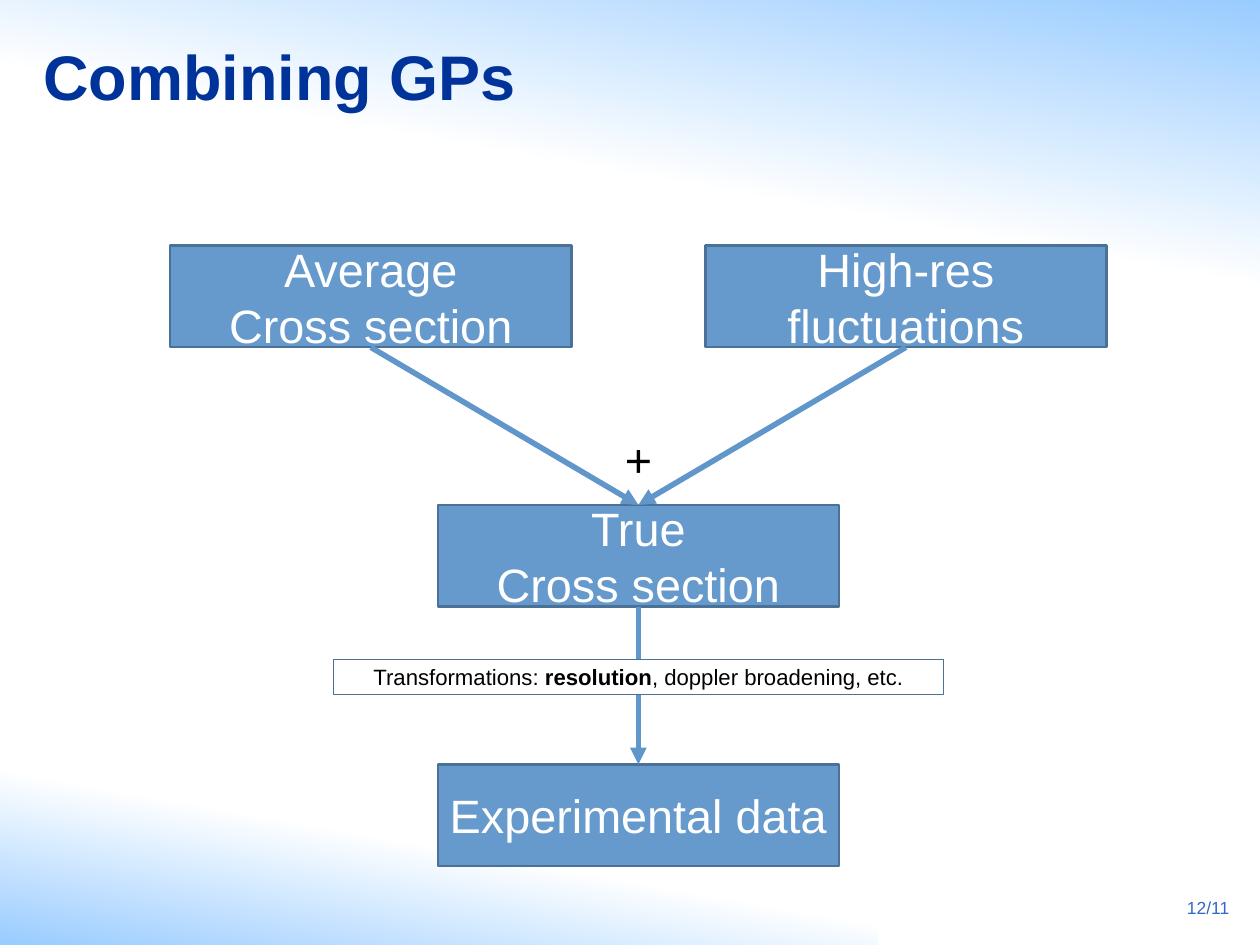
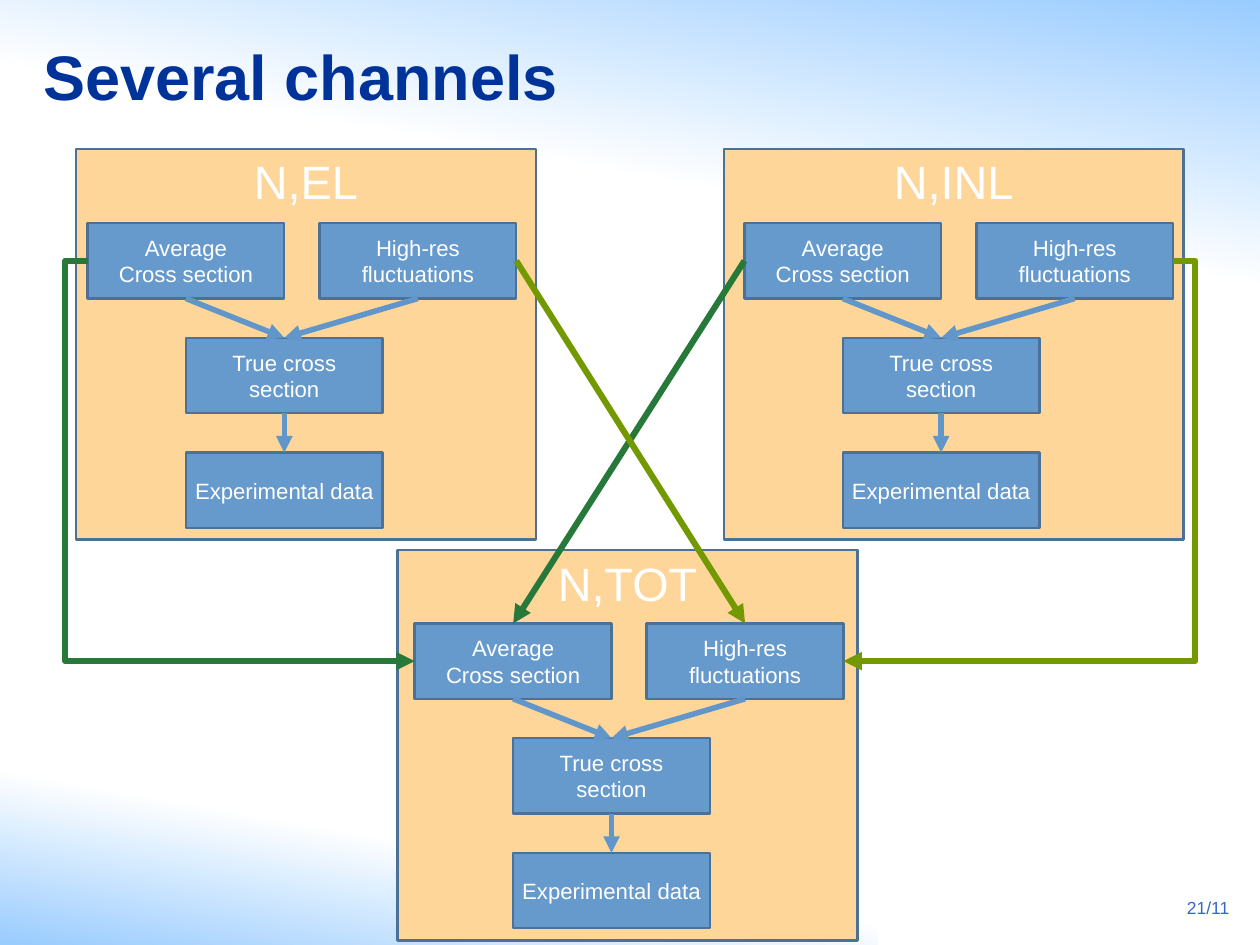
from lxml import etree
from pptx import Presentation
from pptx.dml.color import RGBColor
from pptx.enum.shapes import MSO_CONNECTOR, MSO_SHAPE
from pptx.enum.text import MSO_ANCHOR, MSO_AUTO_SIZE, PP_ALIGN
from pptx.oxml.ns import qn
from pptx.util import Cm, Pt

RECT = MSO_SHAPE.RECTANGLE
STRAIGHT, ELBOW = MSO_CONNECTOR.STRAIGHT, MSO_CONNECTOR.ELBOW
TOP, MIDDLE = MSO_ANCHOR.TOP, MSO_ANCHOR.MIDDLE
LEFT, CENTER, RIGHT = PP_ALIGN.LEFT, PP_ALIGN.CENTER, PP_ALIGN.RIGHT
FONT = "Arial"
COLORS = {
    name: RGBColor.from_string(value)
    for name, value in {
        "title": "003399", "number": "3366CC", "sky": "99CCFF",
        "white": "FFFFFF", "black": "000000", "box": "6699CC",
        "border": "4B7197", "panel": "FFD699", "arrow": "6196CA",
        "average": "267939", "highres": "739900",
    }.items()
}


def add_box(s, x, y, w, h, text, size, fill="box", color="white", border=2, anchor=MIDDLE):
    """Add a bordered rectangle with centred text; lengths in cm."""
    sp = s.shapes.add_shape(RECT, Cm(x), Cm(y), Cm(w), Cm(h))
    sp.shadow.inherit = False
    sp.fill.solid()
    sp.fill.fore_color.rgb = COLORS[fill]
    sp.line.color.rgb = COLORS["border"]
    sp.line.width = Pt(border)
    tf = sp.text_frame
    tf.word_wrap = True
    tf.margin_left = tf.margin_right = Cm(0.25)
    tf.vertical_anchor = anchor
    tf.text = text
    for p in tf.paragraphs:
        p.alignment = CENTER
        p.font.name, p.font.size = FONT, Pt(size)
        p.font.color.rgb = COLORS[color]
    return sp


def add_arrow(s, start, start_side, end, end_side, color="arrow", width=4.5, bend=None):
    """Join two boxes; bend is the elbow position in 1/100000 of the width."""
    c = s.shapes.add_connector(STRAIGHT if bend is None else ELBOW, 0, 0, 0, 0)
    c.begin_connect(start, start_side)
    c.end_connect(end, end_side)
    c.line.color.rgb = COLORS[color]
    c.line.width = Pt(width)
    spPr = c.element.spPr
    etree.SubElement(spPr.find(qn("a:ln")), qn("a:tailEnd"), type="triangle")
    etree.SubElement(spPr, qn("a:effectLst"))
    if bend is not None:
        guides = spPr.find(qn("a:prstGeom")).get_or_add_avLst()
        etree.SubElement(guides, qn("a:gd"), name="adj1", fmla=f"val {bend}")


prs = Presentation()
prs.slide_width, prs.slide_height = Cm(36.12), Cm(27.1)
layout = prs.slide_layouts[5]

# Title place, shared through the layout
title = layout.placeholders[0]
title.left, title.top, title.width, title.height = Cm(0.99), Cm(0.46), Cm(24.18), Cm(3.4)

# Titles and page numbers
slides = []
for heading, number in [("Combining GPs", "12/11"), ("Several channels", "21/11")]:
    s = prs.slides.add_slide(layout)
    slides.append(s)
    tf = s.shapes.title.text_frame
    tf.text = heading
    tf.auto_size = MSO_AUTO_SIZE.NONE
    tf.vertical_anchor = MIDDLE
    p = tf.paragraphs[0]
    p.alignment = LEFT
    p.font.name, p.font.size, p.font.bold = FONT, Pt(51.2), True
    p.font.color.rgb = COLORS["title"]

    tf = s.shapes.add_textbox(Cm(33.48), Cm(25.6), Cm(2.01), Cm(1.17)).text_frame
    tf.word_wrap = True
    tf.text = number
    p = tf.paragraphs[0]
    p.alignment = RIGHT
    p.font.name, p.font.size = FONT, Pt(14.2)
    p.font.color.rgb = COLORS["number"]
combining, channels = slides

# Gradient bands, moved to the back of the layout
for y, w, h, fade, angle in [(0, 36.12, 8.43, 0.56, 260), (20.95, 25.17, 6.15, 0.48, 80)]:
    band = combining.shapes.add_shape(RECT, 0, Cm(y), Cm(w), Cm(h))
    band.shadow.inherit = False
    band.line.fill.background()
    band.fill.gradient()
    band.fill.gradient_angle = angle
    for stop, color, position in zip(band.fill.gradient_stops, ("sky", "white"), (0, fade)):
        stop.color.rgb = COLORS[color]
        stop.position = position
    layout.shapes.element.insert(2, band.element)

# Panels behind the channel flows
for name, x, y in [("N,TOT", 11.4, 15.77), ("N,INL", 20.75, 4.27), ("N,EL", 2.18, 4.27)]:
    add_box(channels, x, y, 13.18, 11.2, name, 38, fill="panel", anchor=TOP)

# Flows: two inputs, true cross section, data
large = dict(w=11.5, h=2.92, size=38, true_dx=7.67, high_dx=15.34, dy=7.44,
             true_text="True\nCross section")
small = dict(w=5.64, h=2.16, size=18, true_dx=2.82, high_dx=6.65, dy=3.29,
             true_text="True cross section")
inputs = []
for s, x, y, f in [
    (combining, 4.88, 7.04, large),
    (channels, 2.51, 6.4, small),
    (channels, 21.34, 6.4, small),
    (channels, 11.89, 17.88, small),
]:
    average, highres, true, data = [
        add_box(s, x + dx, y + row * f["dy"], f["w"], f["h"], text, f["size"])
        for dx, row, text in [
            (0, 0, "Average\nCross section"),
            (f["high_dx"], 0, "High-res\nfluctuations"),
            (f["true_dx"], 1, f["true_text"]),
            (f["true_dx"], 2, "Experimental data"),
        ]
    ]
    for start, end in [(average, true), (highres, true), (true, data)]:
        add_arrow(s, start, 2, end, 0)
    inputs.append((average, highres))

# Plus sign and transformations on the first slide
tf = combining.shapes.add_textbox(Cm(16.26), Cm(12.22), Cm(4.09), Cm(1.93)).text_frame
tf.word_wrap = True
tf.text = "+"
p = tf.paragraphs[0]
p.alignment = CENTER
p.font.name, p.font.size = FONT, Pt(38)
p.font.color.rgb = COLORS["black"]

sp = add_box(combining, 9.55, 18.9, 17.5, 1.02, "Transformations: ", 18,
             fill="white", color="black", border=0.75)
p = sp.text_frame.paragraphs[0]
for text, bold in [("resolution", True), (", doppler broadening, etc.", False)]:
    r = p.add_run()
    r.text = text
    r.font.bold = bold

# Links from the partial channels to the total
el, inl, tot = inputs[1:]
add_arrow(channels, el[0], 1, tot[0], 1, "average", 5, bend=-6800)
add_arrow(channels, inl[1], 3, tot[1], 3, "highres", 5, bend=-6700)
add_arrow(channels, inl[0], 1, tot[0], 0, "average", 5)
add_arrow(channels, el[1], 3, tot[1], 0, "highres", 5)

prs.save("out.pptx")
